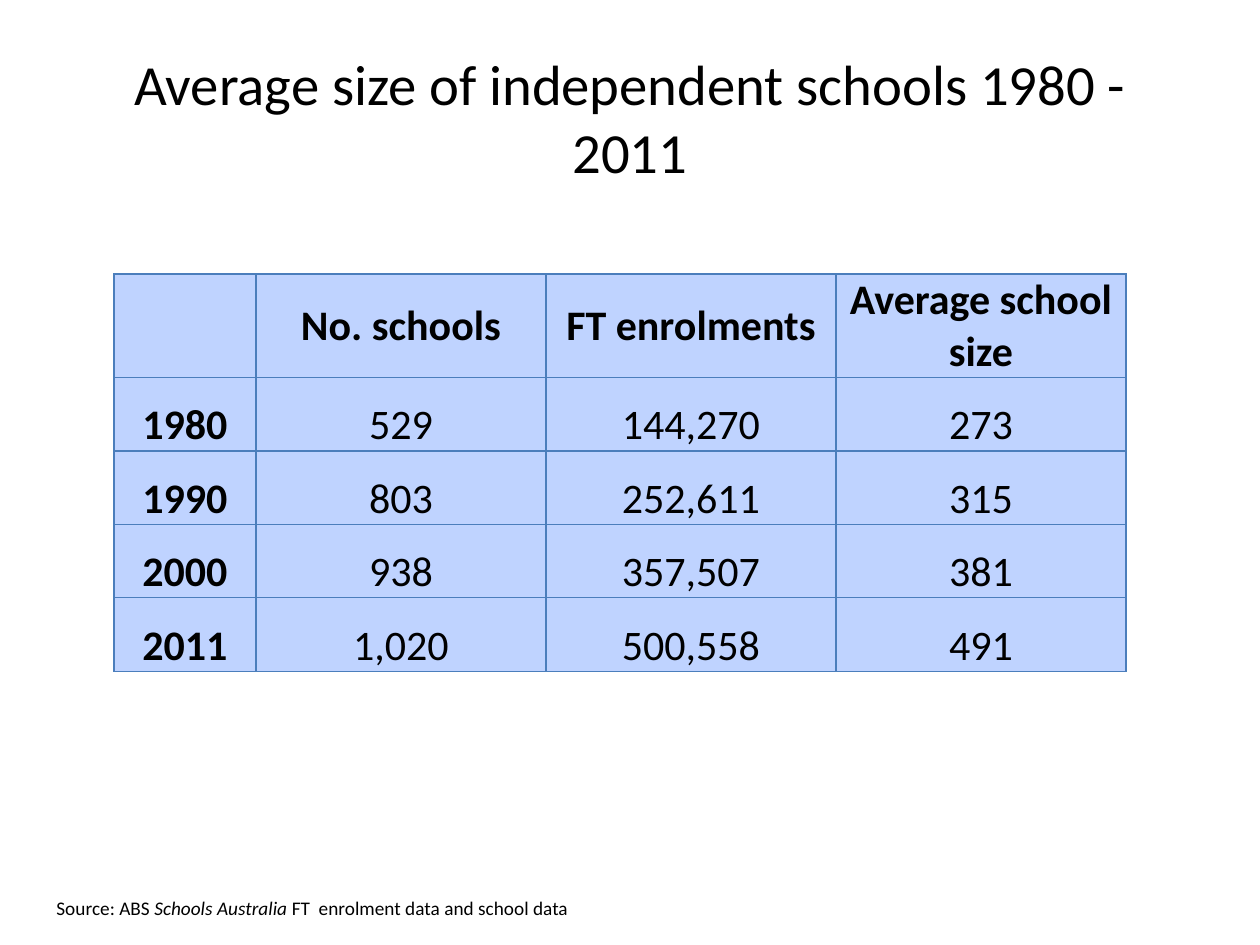
from lxml import etree
from pptx import Presentation, util as u
from pptx.dml.color import RGBColor
from pptx.enum import text
from pptx.oxml import ns

PX_PER_INCH = 126
FONT = "Calibri"
BLACK, CELL_BLUE, BORDER_BLUE = "000000", "BFD3FF", "4B7EBC"
CENTER = text.PP_ALIGN.CENTER
MIDDLE, BOTTOM = text.MSO_ANCHOR.MIDDLE, text.MSO_ANCHOR.BOTTOM
ROWS = [
    ["", "No. schools", "FT enrolments", "Average school size"],
    ["1980", "529", "144,270", "273"],
    ["1990", "803", "252,611", "315"],
    ["2000", "938", "357,507", "381"],
    ["2011", "1,020", "500,558", "491"],
]
SOURCE = [
    ("Source: ABS ", False),
    ("Schools Australia ", True),
    ("FT  enrolment data and school data", False),
]


def px(length):
    """Turn whole pixels into EMU."""
    return u.Emu(length * 914400 // PX_PER_INCH)


def color(value):
    """Turn a hex string into a colour."""
    return RGBColor.from_string(value)


def apply(target, formats):
    """Set each attribute named in a dict."""
    for name, value in formats.items():
        setattr(target, name, value)


def style_font(font, size, **formats):
    """Set the face, size, colour and further formats of a font."""
    apply(font, {"name": FONT, "size": u.Pt(size), **formats})
    font.color.rgb = color(BLACK)


def place(shape, box):
    """Move a shape to a pixel box."""
    apply(shape, dict(zip(("left", "top", "width", "height"), map(px, box))))


def add_title(slide, box):
    """Fill the title placeholder."""
    title = slide.shapes.title
    place(title, box)
    frame = title.text_frame
    frame.text = "Average size of independent schools 1980 - 2011"
    apply(frame, {"vertical_anchor": MIDDLE, "word_wrap": True,
                  "auto_size": text.MSO_AUTO_SIZE.NONE})
    paragraph = frame.paragraphs[0]
    paragraph.alignment = CENTER
    style_font(paragraph.runs[0].font, 32.4)


def add_borders(cell):
    """Draw the four borders of a cell."""
    properties = cell._tc.get_or_add_tcPr()
    for index, side in enumerate(("lnL", "lnR", "lnT", "lnB")):
        line = etree.Element(ns.qn(f"a:{side}"), w=str(u.Pt(0.75)))
        fill = etree.SubElement(line, ns.qn("a:solidFill"))
        etree.SubElement(fill, ns.qn("a:srgbClr"), val=BORDER_BLUE)
        properties.insert(index, line)


def fill_cell(cell, value, bold, anchor):
    """Write and format one table cell."""
    cell.text = value
    apply(cell, {"vertical_anchor": anchor, "margin_left": px(1), "margin_right": px(1),
                 "margin_top": px(1), "margin_bottom": 0})
    cell.fill.solid()
    cell.fill.fore_color.rgb = color(CELL_BLUE)
    add_borders(cell)
    paragraph = cell.text_frame.paragraphs[0]
    paragraph.alignment = CENTER
    style_font(paragraph.font, 24, bold=bold)
    for run in paragraph.runs:
        style_font(run.font, 24, bold=bold)


def add_school_table(slide, box, year_width, header_height):
    """Add the table with a narrow year column and a tall header row."""
    row_count, column_count = len(ROWS), len(ROWS[0])
    table = slide.shapes.add_table(row_count, column_count, *map(px, box)).table
    apply(table, {"first_row": False, "horz_banding": False})
    for index, column in enumerate(table.columns):
        data_width = px(box[2] - year_width) // (column_count - 1)
        column.width = data_width if index else px(year_width)
    for index, row in enumerate(table.rows):
        data_height = px(box[3] - header_height) // (row_count - 1)
        row.height = data_height if index else px(header_height)
        for position, value in enumerate(ROWS[index]):
            heading = index == 0 or position == 0
            fill_cell(row.cells[position], value, heading, BOTTOM if index else MIDDLE)


def add_source(slide, box):
    """Add the source line."""
    frame = slide.shapes.add_textbox(*map(px, box)).text_frame
    apply(frame, {"word_wrap": True, "auto_size": text.MSO_AUTO_SIZE.SHAPE_TO_FIT_TEXT})
    for words, italic in SOURCE:
        run = frame.paragraphs[0].add_run()
        run.text = words
        style_font(run.font, 11, italic=italic)


def main():
    """Build and save the presentation."""
    presentation = Presentation()
    apply(presentation, {"slide_width": px(1260), "slide_height": px(945)})
    slide = presentation.slides.add_slide(presentation.slide_layouts[5])
    add_title(slide, (63, 38, 1134, 158))
    add_school_table(slide, (114, 274, 1012, 397), year_width=142, header_height=103)
    add_source(slide, (44, 890, 903, 36))
    presentation.save("out.pptx")


if __name__ == "__main__":
    main()
